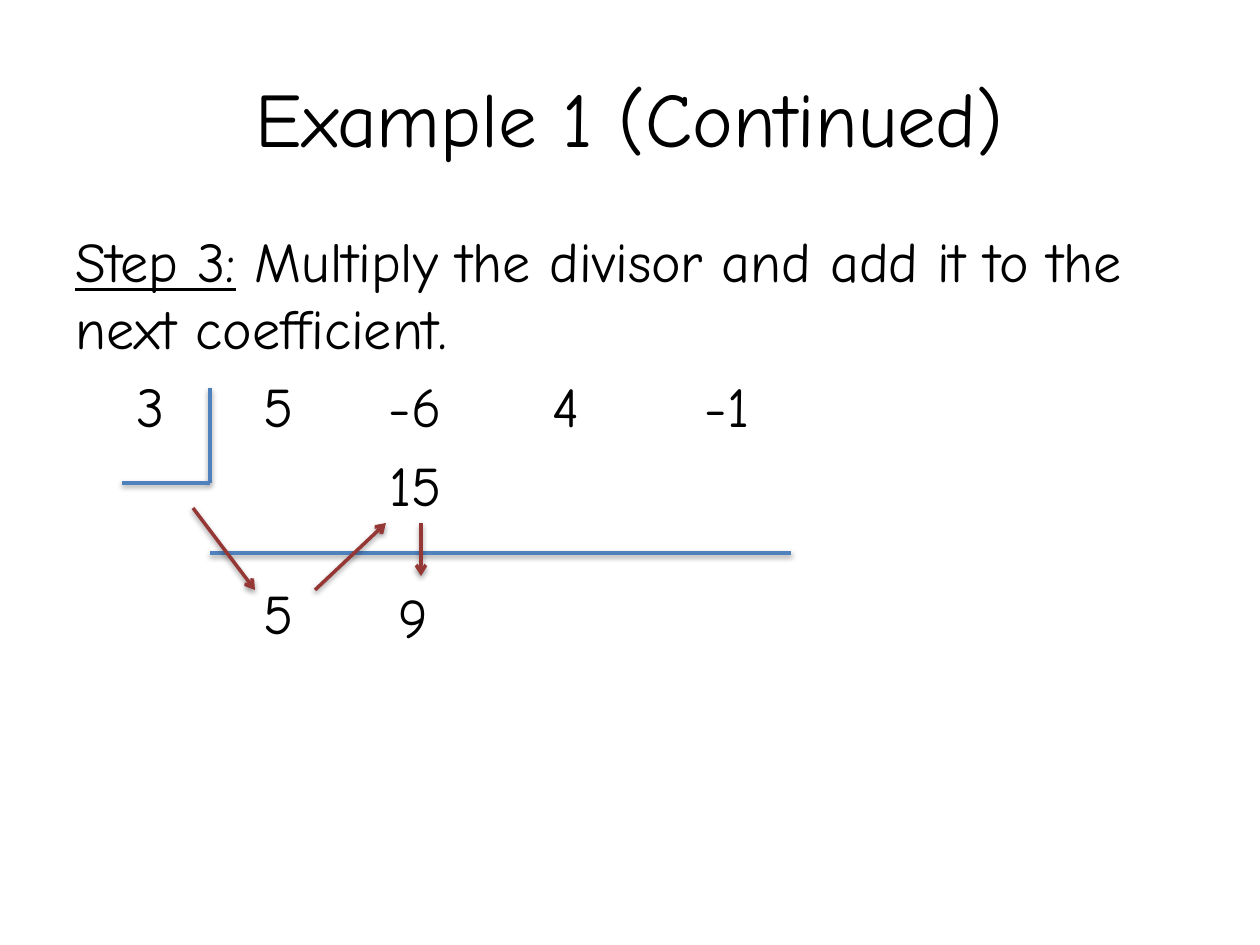
import pptx
import pptx.dml.color
import pptx.enum.shapes
import pptx.enum.text
import pptx.oxml
import pptx.oxml.ns
import pptx.util

BLACK = pptx.dml.color.RGBColor(0x00, 0x00, 0x00)
BLUE = pptx.dml.color.RGBColor(0x4F, 0x81, 0xBD)
DARK_RED = pptx.dml.color.RGBColor(0x95, 0x37, 0x35)
FONT = "Comic Neue"
PX = 914400 / 126
BODY_SIZE = 32

# Content
TITLE = "Example 1 (Continued)"
STEP = "Step 3:"
INSTRUCTION = " Multiply the divisor and add it to the next coefficient."
COLUMN_CENTRES = [75, 203, 340, 491, 652]  # px from the left edge of the text
# Each row: {column: value}, space before in points
DIVISION_ROWS = [
    ({0: "3", 1: "5", 2: "-6", 3: "4", 4: "-1"}, 6.4),
    ({2: "15"}, 6.4),
    ({1: "5"}, 35),
]
NEXT_SUM = "9"

# Lines as (x1, y1, x2, y2) in px
BRACKET_AND_RULE = [
    (210, 388, 210, 483),
    (210, 483, 122, 483),
    (210, 553, 791, 553),
]
STEP_ARROWS = [
    (193, 508, 255, 590),
    (315, 590, 386, 523),
    (421, 523, 421, 576),
]

NS = pptx.oxml.ns.nsdecls("a")
SHADOW = (
    f'<a:effectLst {NS}><a:outerShdw blurRad="40000" dist="20000" dir="5400000" '
    'rotWithShape="0"><a:srgbClr val="000000"><a:alpha val="38000"/></a:srgbClr>'
    "</a:outerShdw></a:effectLst>"
)
ARROWHEAD = f'<a:tailEnd {NS} type="arrow"/>'


def px(length):
    return round(length * PX)


def add_text_frame(slide, left, top, width, height):
    frame = slide.shapes.add_textbox(*map(px, (left, top, width, height))).text_frame
    frame.word_wrap = True
    return frame


def format_runs(paragraph, size):
    for run in paragraph.runs:
        run.font.name = FONT
        run.font.size = pptx.util.Pt(size)
        run.font.color.rgb = BLACK


def set_tab_stops(paragraph, columns):
    stops = "".join(
        f'<a:tab pos="{px(COLUMN_CENTRES[column])}" algn="ctr"/>' for column in columns
    )
    properties = paragraph._p.get_or_add_pPr()
    properties.append(pptx.oxml.parse_xml(f"<a:tabLst {NS}>{stops}</a:tabLst>"))


def add_line(slide, ends, color, arrow=False):
    line = slide.shapes.add_connector(
        pptx.enum.shapes.MSO_CONNECTOR.STRAIGHT, *map(px, ends)
    )
    line.line.color.rgb = color
    line.line.width = pptx.util.Pt(2)
    if arrow:
        line.line._get_or_add_ln().append(pptx.oxml.parse_xml(ARROWHEAD))
    line._element.spPr.append(pptx.oxml.parse_xml(SHADOW))


def main():
    deck = pptx.Presentation()
    deck.slide_width, deck.slide_height = px(1260), px(945)
    slide = deck.slides.add_slide(deck.slide_layouts[6])

    # Title
    title = add_text_frame(slide, 63, 38, 1134, 157)
    title.vertical_anchor = pptx.enum.text.MSO_ANCHOR.MIDDLE
    title.text = TITLE
    title.paragraphs[0].alignment = pptx.enum.text.PP_ALIGN.CENTER
    format_runs(title.paragraphs[0], 44)

    # Instruction
    body = add_text_frame(slide, 63, 220, 1134, 624)
    instruction = body.paragraphs[0]
    instruction.space_before = pptx.util.Pt(6.4)
    for words in (STEP, INSTRUCTION):
        instruction.add_run().text = words
    format_runs(instruction, BODY_SIZE)
    instruction.runs[0].font.underline = True

    # Synthetic division, one centred tab stop per value
    for values, space_before in DIVISION_ROWS:
        row = body.add_paragraph()
        row.text = "".join(f"\t{value}" for value in values.values())
        row.space_before = pptx.util.Pt(space_before)
        set_tab_stops(row, values)
        format_runs(row, BODY_SIZE)

    # Bracket, rule and arrows
    for ends in BRACKET_AND_RULE:
        add_line(slide, ends, BLUE)
    for ends in STEP_ARROWS:
        add_line(slide, ends, DARK_RED, arrow=True)

    # Sum under the second coefficient
    next_sum = add_text_frame(slide, 386, 576, 73, 81)
    next_sum.text = NEXT_SUM
    format_runs(next_sum.paragraphs[0], BODY_SIZE)

    deck.save("out.pptx")


if __name__ == "__main__":
    main()
